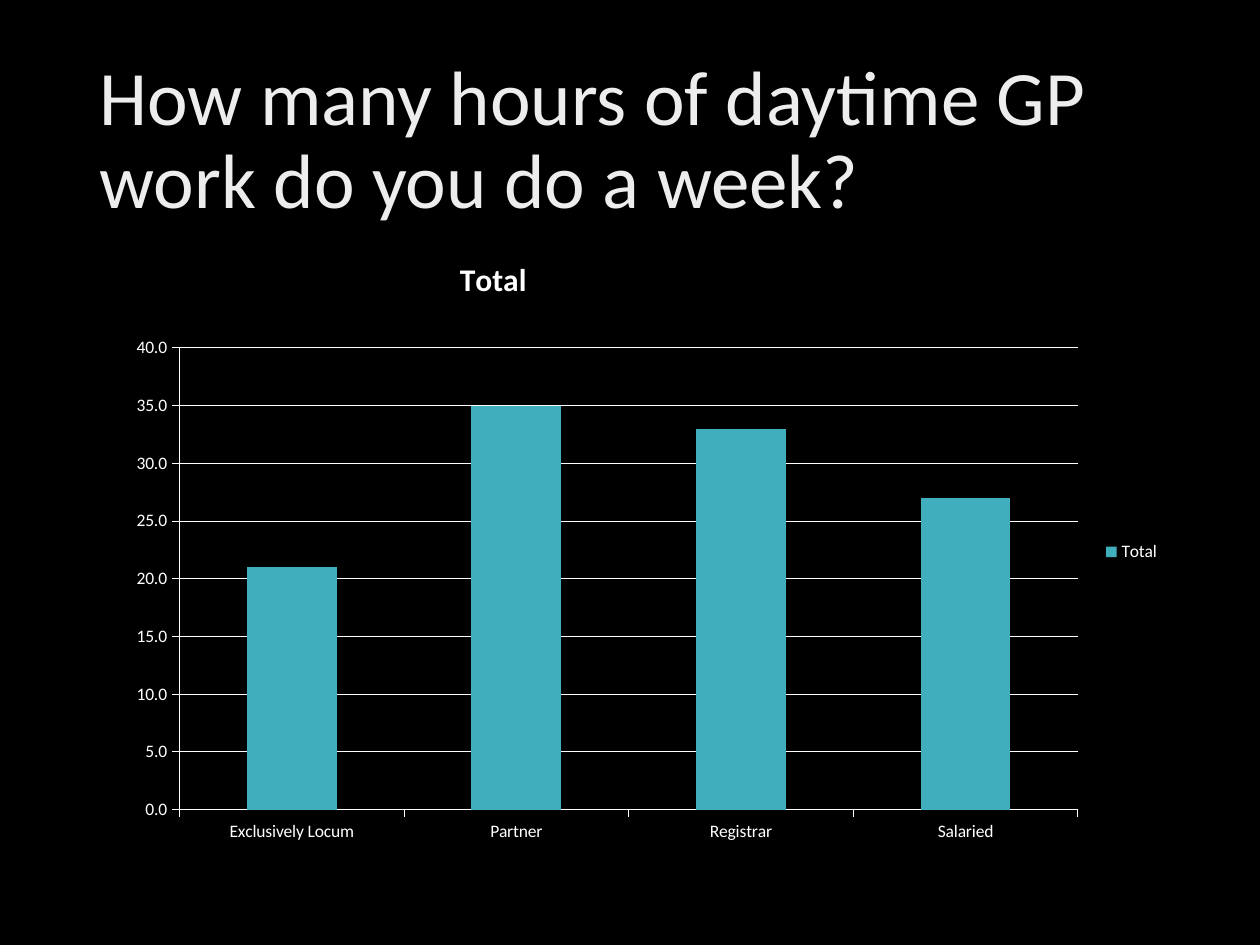
"""Build a slide with a column chart of weekly daytime GP hours by role."""
import pptx
import pptx.chart.data
import pptx.dml.color
import pptx.enum.chart
import pptx.enum.text
import pptx.oxml
import pptx.oxml.ns
import pptx.util
from pptx.util import Inches

COLORS = {"background": "000000", "text": "FFFFFF", "title": "EDEDED",
          "title_start": "BFBFBF", "bar": "41AEBD"}
FONT = "Calibri"


def rgb(name):
    return pptx.dml.color.RGBColor.from_string(COLORS[name])


def write(tf, text, size, color="text", bold=False, align=None, spacing=None):
    p = tf.paragraphs[0]
    p.alignment = align
    p.line_spacing = spacing
    r = p.add_run()
    r.text = text
    r.font.name = FONT
    r.font.size = pptx.util.Pt(size)
    r.font.bold = bold
    r.font.color.rgb = rgb(color)
    return r


prs = pptx.Presentation()
prs.slide_width, prs.slide_height = Inches(10), Inches(7.5)
s = prs.slides.add_slide(prs.slide_layouts[5])
s.background.fill.solid()
s.background.fill.fore_color.rgb = rgb("background")

title = s.shapes.title
title.left, title.top = Inches(0.69), Inches(0.4)
title.width, title.height = Inches(8.62), Inches(1.45)
tf = title.text_frame
tf.word_wrap = True
tf.auto_size = pptx.enum.text.MSO_AUTO_SIZE.NONE
tf.vertical_anchor = pptx.enum.text.MSO_ANCHOR.MIDDLE
r = write(tf, "How many hours of daytime GP work do you do a week?", 44, color="title",
          align=pptx.enum.text.PP_ALIGN.LEFT, spacing=0.9)

stops = "".join(f'<a:gs pos="{pos * 1000}"><a:srgbClr val="{COLORS[name]}"/></a:gs>'
                for pos, name in [(0, "title_start"), (28, "title"), (100, "text")])
gradient = pptx.oxml.parse_xml(
    f'<a:gradFill {pptx.oxml.ns.nsdecls("a")}><a:gsLst>{stops}</a:gsLst>'
    '<a:lin ang="4800000" scaled="0"/></a:gradFill>')
rPr = r.font._element
rPr.replace(rPr.find(pptx.oxml.ns.qn("a:solidFill")), gradient)

data = pptx.chart.data.CategoryChartData(number_format="0.0")
data.categories = ["Exclusively Locum", "Partner", "Registrar", "Salaried"]
data.add_series("Total", [21, 35, 33, 27])
chart = s.shapes.add_chart(
    pptx.enum.chart.XL_CHART_TYPE.COLUMN_CLUSTERED,
    Inches(0.92), Inches(2), Inches(8.39), Inches(4.76), data).chart
chart.font.name = FONT
chart.font.size = pptx.util.Pt(10)
chart.font.color.rgb = rgb("text")

chart.has_title = True
write(chart.chart_title.text_frame, "Total", 18, bold=True)
chart.chart_title.include_in_layout = False
chart.has_legend = True
chart.legend.position = pptx.enum.chart.XL_LEGEND_POSITION.RIGHT
chart.legend.include_in_layout = False

plot = chart.plots[0]
plot.gap_width = 150
plot.vary_by_categories = False
fill = plot.series[0].format.fill
fill.solid()
fill.fore_color.rgb = rgb("bar")

value_axis = chart.value_axis
value_axis.minimum_scale, value_axis.maximum_scale = 0, 40
value_axis.major_unit = 5
value_axis.has_major_gridlines = True
value_axis.tick_labels.number_format = "0.0"
value_axis.tick_labels.number_format_is_linked = False
for axis in (chart.category_axis, value_axis):
    axis.major_tick_mark = pptx.enum.chart.XL_TICK_MARK.OUTSIDE
    axis.minor_tick_mark = pptx.enum.chart.XL_TICK_MARK.NONE
for part in (chart.category_axis, value_axis, value_axis.major_gridlines):
    part.format.line.color.rgb = rgb("text")
    part.format.line.width = pptx.util.Pt(0.5)

title_element = chart.chart_title._element
plot_area = chart._chartSpace.chart.plotArea
for parent, index, target, box in [
        (title_element, 1, "", {"x": 0.32, "y": 0}),
        (plot_area, 0, '<c:layoutTarget val="inner"/>',
         {"x": 0.06, "y": 0.16, "w": 0.85, "h": 0.77})]:
    for old in parent.findall(pptx.oxml.ns.qn("c:layout")):
        parent.remove(old)
    modes = "".join(f'<c:{key}Mode val="edge"/>' for key in "xy")
    sizes = "".join(f'<c:{key} val="{value}"/>' for key, value in box.items())
    parent.insert(index, pptx.oxml.parse_xml(
        f'<c:layout {pptx.oxml.ns.nsdecls("c")}><c:manualLayout>'
        f'{target}{modes}{sizes}</c:manualLayout></c:layout>'))

prs.save("out.pptx")
